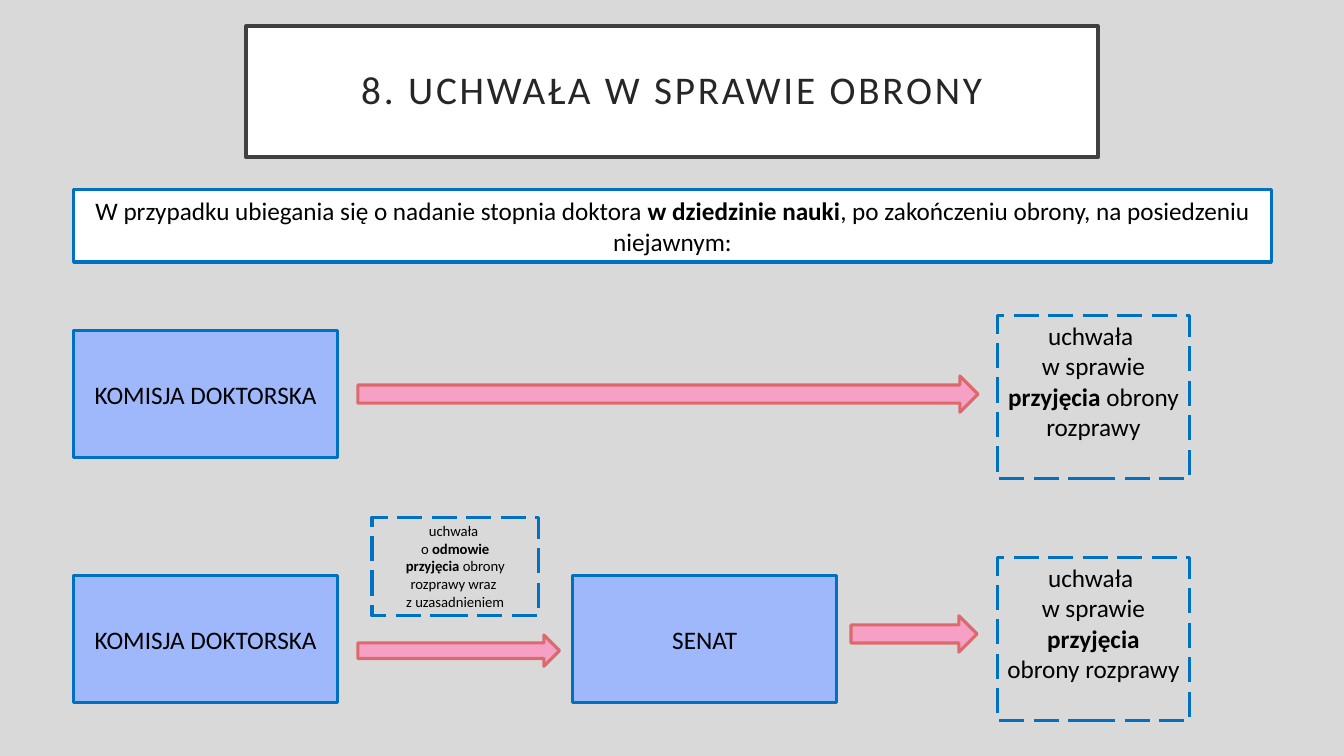
import pptx
import pptx.util
import pptx.dml.color
import pptx.enum.dml
import pptx.enum.shapes
import pptx.enum.text

EMU_PER_PX = 9144  # 100 px to the inch
COLOURS = {
    "page": "D9D9D9", "white": "FFFFFF", "frame": "404040", "title": "262626",
    "text": "000000", "blue": "0070C0", "actor": "9FB7FB",
    "arrow": "F6A0C5", "arrow_edge": "DC6A6D",
}
SHAPES = pptx.enum.shapes.MSO_SHAPE
ANCHORS = pptx.enum.text.MSO_ANCHOR


def px(length):
    return pptx.util.Emu(length * EMU_PER_PX)


def colour(name):
    return pptx.dml.color.RGBColor.from_string(COLOURS[name])


def set_all(target, values):
    for name, value in values.items():
        setattr(target, name, value)


def add_block(page, box, fill, edge, width=2.25, kind=SHAPES.RECTANGLE):
    block = page.shapes.add_shape(kind, *map(px, box))
    block.shadow.inherit = False
    if fill:
        block.fill.solid()
        block.fill.fore_color.rgb = colour(fill)
    else:
        block.fill.background()
    block.line.color.rgb = colour(edge)
    block.line.width = pptx.util.Pt(width)
    return block


def write(block, paragraphs, size=18, ink="text", anchor=ANCHORS.MIDDLE, inset=None):
    """Fill a block with paragraphs; ** switches bold, a newline breaks the line."""
    frame = block.text_frame
    set_all(frame, {"word_wrap": True, "vertical_anchor": anchor,
                    "auto_size": pptx.enum.text.MSO_AUTO_SIZE.NONE})
    if inset is not None:
        set_all(frame, {"margin_" + side: px(inset)
                        for side in ("left", "top", "right", "bottom")})
    for index, text in enumerate(paragraphs):
        para = frame.add_paragraph() if index else frame.paragraphs[0]
        para.alignment = pptx.enum.text.PP_ALIGN.CENTER
        for part, piece in enumerate(text.split("**")):
            for row, words in enumerate(piece.split("\n")):
                if row:
                    para.add_line_break()
                if words:
                    span = para.add_run()
                    span.text = words
                    set_all(span.font, {"name": "Calibri", "size": pptx.util.Pt(size),
                                        "bold": part % 2 == 1})
                    span.font.color.rgb = colour(ink)


def add_title(page, box, text):
    block = add_block(page, box, "white", "frame", 2.5)
    write(block, [text], size=28, ink="title", inset=20)
    para = block.text_frame.paragraphs[0]
    para.line_spacing = 0.9
    para.runs[0]._r.get_or_add_rPr().set("spc", "200")


def add_intro(page, box, text):
    write(add_block(page, box, "white", "blue"), [text])


def add_actor(page, box, name):
    write(add_block(page, box, "actor", "blue"), [name])


def add_resolution(page, box, paragraphs, size=18):
    block = add_block(page, box, None, "blue")
    block.line.dash_style = pptx.enum.dml.MSO_LINE.LONG_DASH
    write(block, paragraphs, size, anchor=ANCHORS.TOP)


def add_arrow(page, box):
    add_block(page, box, "arrow", "arrow_edge", kind=SHAPES.RIGHT_ARROW)


def add_acceptance_row(page, box):
    left, top, width, height = box
    add_actor(page, (left, top + 15, 262, 126), "KOMISJA DOKTORSKA")
    add_arrow(page, (left + 282, top + 60, 615, 36))
    add_resolution(page, (left + width - 191, top, 191, height),
                   ["uchwała \nw sprawie **przyjęcia** obrony rozprawy"])


def add_refusal_row(page, box):
    left, top, width, height = box
    for offset, name in ((0, "KOMISJA DOKTORSKA"), (495, "SENAT")):
        add_actor(page, (left + offset, top + 18, 262, 126), name)
    add_resolution(page, (left + 296, top - 40, 165, 98),
                   ["uchwała \no **odmowie**",
                    "**przyjęcia** obrony rozprawy wraz \nz uzasadnieniem"], 10.5)
    add_arrow(page, (left + 282, top + 77, 200, 31))
    add_arrow(page, (left + 771, top + 58, 125, 36))
    add_resolution(page, (left + width - 191, top, 191, height),
                   ["uchwała \nw sprawie", "**przyjęcia**", "obrony rozprawy"])


def main():
    deck = pptx.Presentation()
    set_all(deck, {"slide_width": px(1333), "slide_height": px(750)})
    page = deck.slides.add_slide(deck.slide_layouts[6])
    page.background.fill.solid()
    page.background.fill.fore_color.rgb = colour("page")

    # Heading and introduction
    add_title(page, (244, 26, 845, 130), "8. UCHWAŁA W SPRAWIE OBRONY")
    add_intro(page, (73, 188, 1188, 72),
              "W przypadku ubiegania się o nadanie stopnia doktora "
              "**w dziedzinie nauki**, po zakończeniu obrony, na posiedzeniu niejawnym:")

    # The two courses of the procedure
    add_acceptance_row(page, (73, 313, 1107, 162))
    add_refusal_row(page, (73, 553, 1107, 162))
    deck.save("out.pptx")


if __name__ == "__main__":
    main()
